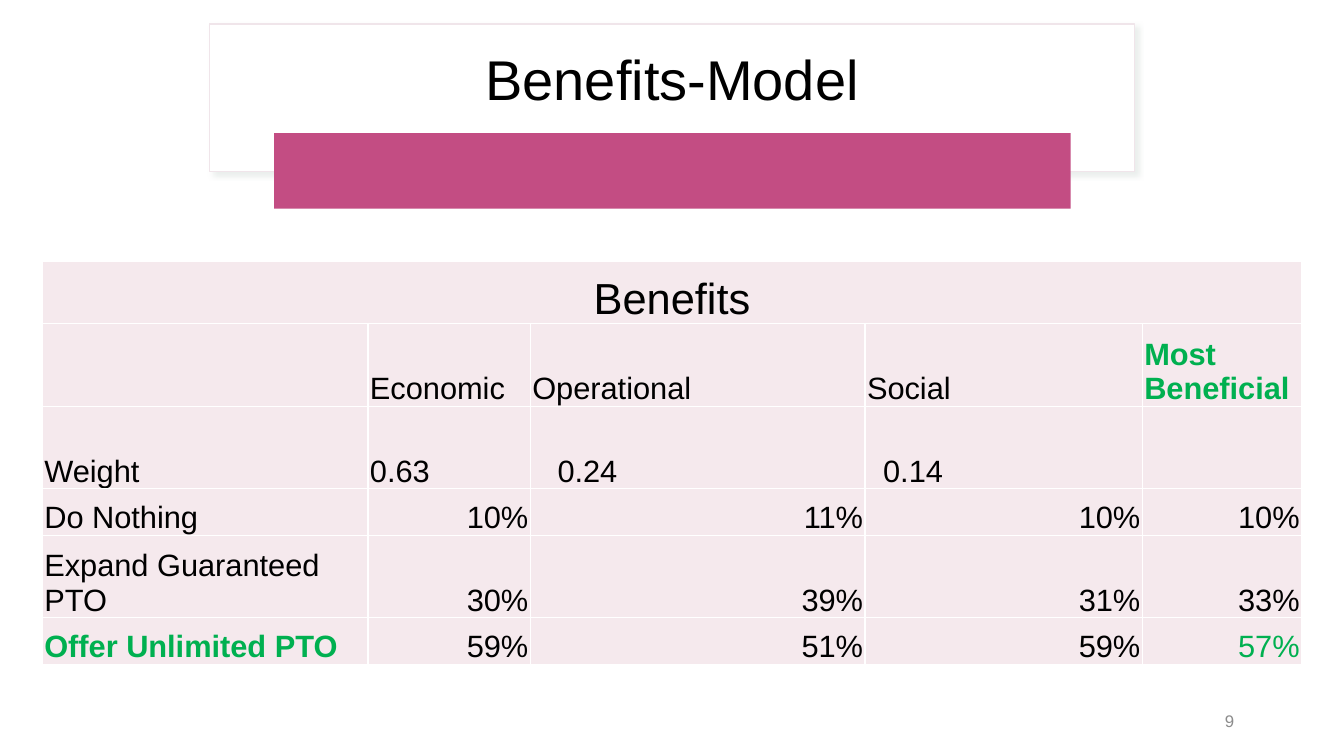
from lxml import etree
from pptx import Presentation
from pptx.dml.color import RGBColor
from pptx.enum import shapes, text
from pptx.oxml import ns
from pptx.util import Inches, Pt

HUES = {"white": "FFFFFF", "black": "000000", "edge": "F0E5EA", "rose": "C34D83",
        "blush": "F5E9ED", "green": "00B050", "gray": "8C8C8C", "shade": "BCCAC3"}
LEFT, MID, RIGHT = text.PP_ALIGN.LEFT, text.PP_ALIGN.CENTER, text.PP_ALIGN.RIGHT
COLS = [3.23, 1.61, 3.32, 2.75, 1.58]
ROWS = [0.62, 0.82, 0.82, 0.46, 0.82, 0.46]
DATA = [
    ["Benefits", "", "", "", ""],
    ["", "Economic", "Operational", "Social", "Most Beneficial"],
    ["Weight", "0.63", "0.24", "0.14", ""],
    ["Do Nothing", "10%", "11%", "10%", "10%"],
    ["Expand Guaranteed PTO", "30%", "39%", "31%", "33%"],
    ["Offer Unlimited PTO", "59%", "51%", "59%", "57%"],
]
BOLD = {"Most Beneficial", "Offer Unlimited PTO"}
GREEN = BOLD | {"57%"}
INDENT = {"0.24": 0.27, "0.14": 0.18}


def node(parent, tag, **attrs):
    return etree.SubElement(parent, ns.qn(tag), attrs)


class Deck:
    """Holds the style and the current slide."""

    def __init__(self):
        self.prs = Presentation()
        self.prs.slide_width, self.prs.slide_height = Inches(13.33), Inches(7.5)
        self.slide = self.prs.slides.add_slide(self.prs.slide_layouts[5])
        self.font = "Arial"

    def hue(self, name):
        return RGBColor.from_string(HUES[name])

    def fill_text(self, frame, words, size, hue="black", align=LEFT, bold=False):
        frame.text = words
        para = frame.paragraphs[0]
        para.alignment = align
        for font in [para.font] + [run.font for run in para.runs]:
            font.name, font.size, font.bold = self.font, Pt(size), bold
            font.color.rgb = self.hue(hue)

    def box(self, at, fill, edge=None, shade=None):
        rect = self.slide.shapes.add_shape(
            shapes.MSO_SHAPE.RECTANGLE, *map(Inches, at))
        rect.shadow.inherit = False
        rect.fill.solid()
        rect.fill.fore_color.rgb = self.hue(fill)
        if edge:
            rect.line.color.rgb = self.hue(edge)
            rect.line.width = Pt(1)
        else:
            rect.line.fill.background()
        if shade:
            effects = rect._element.spPr.find(ns.qn("a:effectLst"))
            cast = node(effects, "a:outerShdw", blurRad=str(Pt(4)),
                        dist=str(Pt(3)), dir="2700000", algn="tl")
            tint = node(cast, "a:srgbClr", val=HUES[shade])
            node(tint, "a:alpha", val="30000")

    def title(self, at, words):
        head = self.slide.shapes.title
        head.left, head.top, head.width, head.height = map(Inches, at)
        self.slide.shapes._spTree.append(head._element)  # bring to the front
        self.fill_text(head.text_frame, words, 40, align=MID)
        head.text_frame.vertical_anchor = text.MSO_ANCHOR.MIDDLE
        head.text_frame.paragraphs[0].line_spacing = 0.9

    def label(self, at, words, size, hue, align):
        frame = self.slide.shapes.add_textbox(*map(Inches, at)).text_frame
        frame.word_wrap = True
        frame.vertical_anchor = text.MSO_ANCHOR.MIDDLE
        self.fill_text(frame, words, size, hue, align)

    def cell(self, cell, words, size, align):
        cell.margin_left = Inches(INDENT.get(words, 0.02))
        cell.margin_right = cell.margin_top = Inches(0.02)
        cell.margin_bottom = 0
        cell.vertical_anchor = text.MSO_ANCHOR.BOTTOM
        hue = "green" if words in GREEN else "black"
        self.fill_text(cell.text_frame, words, size, hue, align, words in BOLD)
        props = cell._tc.get_or_add_tcPr()
        for side in ("a:lnL", "a:lnR", "a:lnT", "a:lnB"):
            line = node(props, side, w=str(Pt(1)))
            node(node(line, "a:solidFill"), "a:srgbClr", val=HUES["white"])
        cell.fill.solid()
        cell.fill.fore_color.rgb = self.hue("blush")

    def table(self, left, top):
        grid = self.slide.shapes.add_table(
            len(ROWS), len(COLS), Inches(left), Inches(top),
            Inches(sum(COLS)), Inches(sum(ROWS))).table
        for col, width in zip(grid.columns, COLS):
            col.width = Inches(width)
        for row, height in zip(grid.rows, ROWS):
            row.height = Inches(height)
        for r, line in enumerate(DATA):
            for c, words in enumerate(line):
                align = MID if r == 0 else RIGHT if words.endswith("%") else LEFT
                self.cell(grid.cell(r, c), words, 22 if r else 31, align)
        grid.cell(0, 0).merge(grid.cell(0, len(COLS) - 1))


def main():
    deck = Deck()
    deck.box((2.08, 0.24, 9.17, 1.46), "white", "edge", "shade")
    deck.title((2.3, 0.34, 8.73, 0.95), "Benefits-Model")
    deck.box((2.72, 1.32, 7.9, 0.75), "rose")
    deck.table(0.42, 2.59)
    deck.label((9.34, 6.95, 3, 0.4), "9", 12, "gray", RIGHT)
    deck.prs.save("out.pptx")


if __name__ == "__main__":
    main()
